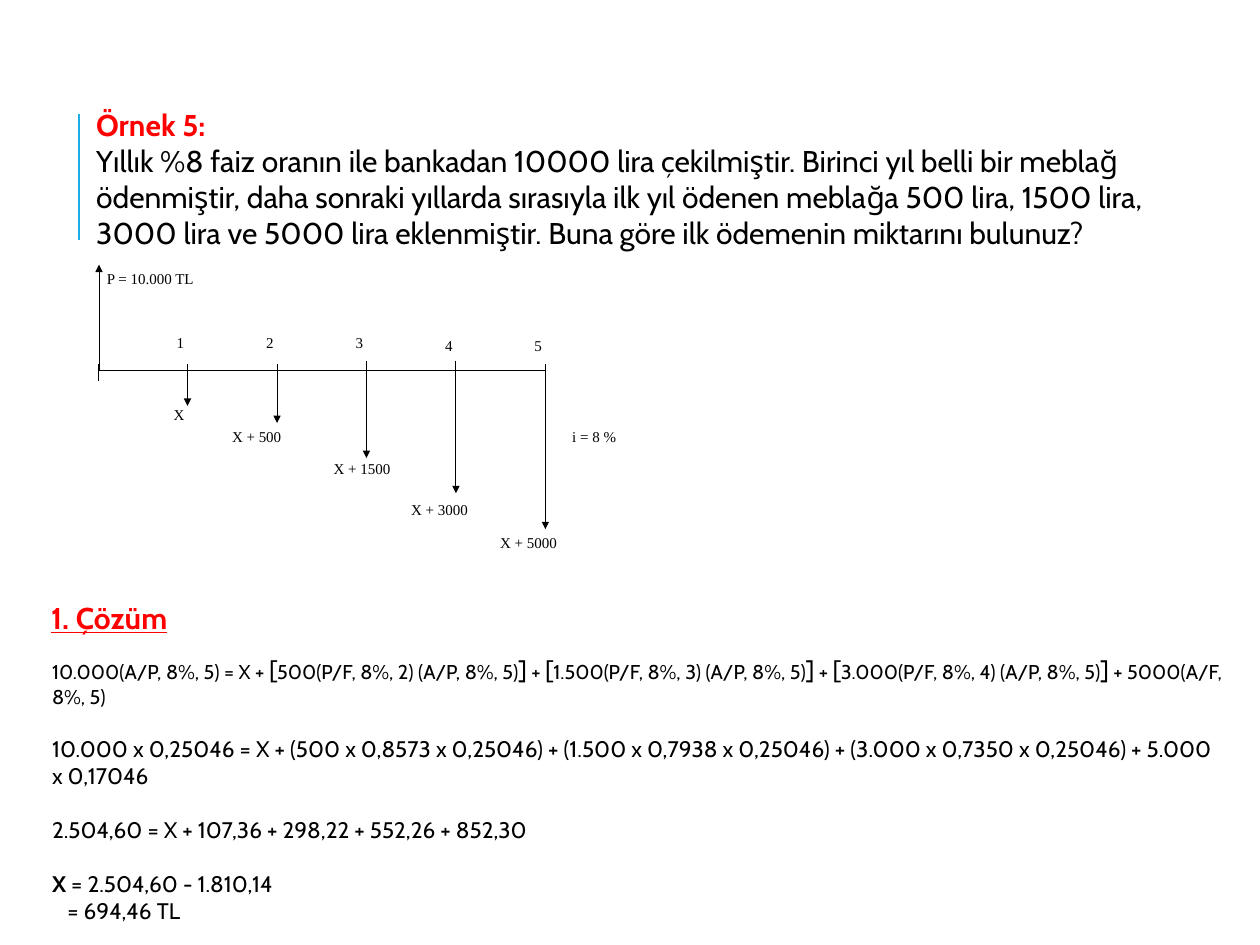
"""Build the slide with a cash-flow diagram and the worked loan example."""
import lxml.etree
import pptx
import pptx.dml.color
import pptx.enum.shapes
import pptx.oxml.ns
import pptx.util

WIDTH, HEIGHT = 14, 10.5
BLACK, RED, BLUE = "000000", "FF0000", "1CADE4"
BODY_FONT, DIAGRAM_FONT = "Cabin", "Times New Roman"

QUESTION = [
    [("Örnek 5:", {"color": RED, "bold": True})],
    ["Yıllık %8 faiz oranın ile bankadan 10000 lira çekilmiştir. Birinci yıl belli bir "
     "meblağ ödenmiştir, daha sonraki yıllarda sırasıyla ilk yıl ödenen meblağa 500 lira, "
     "1500 lira, 3000 lira ve 5000 lira eklenmiştir. Buna göre ilk ödemenin miktarını "
     "bulunuz?"],
]
HEADING = "1. Çözüm"
EQUATION = [
    "10.000(A/P, 8%, 5) = X + ", "[", "500(P/F, 8%, 2) (A/P, 8%, 5)", "]", " + ",
    "[", "1.500(P/F, 8%, 3) (A/P, 8%, 5)", "]", " + ",
    "[", "3.000(P/F, 8%, 4) (A/P, 8%, 5)", "]", " + 5000(A/F, 8%, 5)",
]
SOLUTION = [
    [(piece, {"size": 20 if piece in "[]" else 16}) for piece in EQUATION],
    ["10.000 x 0,25046 = X + (500 x 0,8573 x 0,25046) + (1.500 x 0,7938 x 0,25046) + "
     "(3.000 x 0,7350 x 0,25046) + 5.000 x 0,17046"],
    ["2.504,60 = X + 107,36 + 298,22 + 552,26 + 852,30"],
    [("X ", {"bold": True}), "= 2.504,60 - 1.810,14"],
    ["= 694,46 TL"],
]
SOLUTION_GAPS = [0, 21.6, 21.6, 21.6, 0]

AXIS_LEFT, AXIS_RIGHT, AXIS_TOP = 1.09, 6.06, 4.12
LABEL_HEIGHT = 0.51
PAYMENTS = [
    {"label": "X", "tip": 4.51, "at": (1.83, 4.46), "width": 0.6, "tick": 4.04, "number": 3.66},
    {"label": "X + 500", "tip": 4.7, "at": (2.48, 4.7), "width": 1.33, "tick": 4.04, "number": 3.66},
    {"label": "X + 1500", "tip": 5.09, "at": (3.61, 5.06), "width": 1.33, "tick": 4.01, "number": 3.66},
    {"label": "X + 3000", "tip": 5.48, "at": (4.47, 5.51), "width": 1.33, "tick": 4.01, "number": 3.69},
    {"label": "X + 5000", "tip": 5.88, "at": (5.46, 5.88), "width": 1.33, "tick": 4.04, "number": 3.69},
]
SIDE_NOTES = [("P = 10.000 TL", 1.09, 2.94, 2.19), ("i = 8 %", 6.26, 4.7, 1.59)]


def rgb(value):
    """Turn a hex string into a colour."""
    return pptx.dml.color.RGBColor.from_string(value)


def add_text(page, paragraphs, left, top, width, height, gaps=None, **base):
    """Add a wrapped text box; each span is a string or a (string, format) pair."""
    box = page.shapes.add_textbox(*map(pptx.util.Inches, (left, top, width, height)))
    frame = box.text_frame
    frame.word_wrap = True
    for index, spans in enumerate(paragraphs):
        para = frame.add_paragraph() if index else frame.paragraphs[0]
        para.space_before = pptx.util.Pt(gaps[index] if gaps else 0)
        for span in spans:
            text, extra = (span, {}) if isinstance(span, str) else span
            style = {"font": BODY_FONT, "size": 18, "color": BLACK, **base, **extra}
            run = para.add_run()
            run.text = text
            run.font.name = style["font"]
            run.font.size = pptx.util.Pt(style["size"])
            run.font.color.rgb = rgb(style["color"])
            run.font.bold = style.get("bold", False)
            run.font.underline = style.get("underline", False)
    return box


def add_label(page, text, left, top, width):
    """Add one small label of the cash-flow diagram."""
    add_text(page, [[text]], left, top, width, LABEL_HEIGHT, font=DIAGRAM_FONT, size=12)


def add_line(page, start, end, color=BLACK, weight=0.75, arrow=False):
    """Add a straight line, with an arrowhead at its end if asked for."""
    line = page.shapes.add_connector(
        pptx.enum.shapes.MSO_CONNECTOR.STRAIGHT, *map(pptx.util.Inches, (*start, *end)))
    line.line.color.rgb = rgb(color)
    line.line.width = pptx.util.Pt(weight)
    if arrow:
        outline = line.line._get_or_add_ln()
        lxml.etree.SubElement(outline, pptx.oxml.ns.qn("a:tailEnd"), type="triangle")
    properties = line._element.spPr
    lxml.etree.SubElement(properties, pptx.oxml.ns.qn("a:effectLst"))


def add_diagram(page):
    """Draw the time axis with the loan and the five payments."""
    step = (AXIS_RIGHT - AXIS_LEFT) / len(PAYMENTS)
    add_line(page, (AXIS_LEFT, AXIS_TOP), (AXIS_RIGHT, AXIS_TOP))
    add_line(page, (AXIS_LEFT, 4.04), (AXIS_LEFT, 4.23))
    add_line(page, (1.1, AXIS_TOP), (1.1, 2.94), arrow=True)
    for year, payment in enumerate(PAYMENTS, 1):
        center = AXIS_LEFT + year * step
        add_line(page, (center, payment["tick"]), (center, payment["tick"] + 0.2))
        add_line(page, (center, AXIS_TOP), (center, payment["tip"]), arrow=True)
        add_label(page, str(year), center - 0.22, payment["number"], 0.42)
        add_label(page, payment["label"], *payment["at"], payment["width"])
    for text, left, top, width in SIDE_NOTES:
        add_label(page, text, left, top, width)


def main():
    """Build and save the deck."""
    deck = pptx.Presentation()
    deck.slide_width = pptx.util.Inches(WIDTH)
    deck.slide_height = pptx.util.Inches(HEIGHT)
    page = deck.slides.add_slide(deck.slide_layouts[6])
    add_line(page, (0.88, 2.67), (0.88, 1.27), color=BLUE, weight=1.5)
    add_text(page, QUESTION, 0.97, 1.13, 12.22, 2.12, size=24)
    solution = add_text(page, SOLUTION, 0.48, 7.22, 13.22, 2.91, gaps=SOLUTION_GAPS)
    result = solution.text_frame.paragraphs[-1]
    result._p.get_or_add_pPr().set("marL", str(pptx.util.Inches(0.17)))
    add_text(page, [[HEADING]], 0.47, 6.61, 12.22, 0.5,
             size=24, color=RED, bold=True, underline=True)
    add_diagram(page)
    deck.save("out.pptx")


if __name__ == "__main__":
    main()
